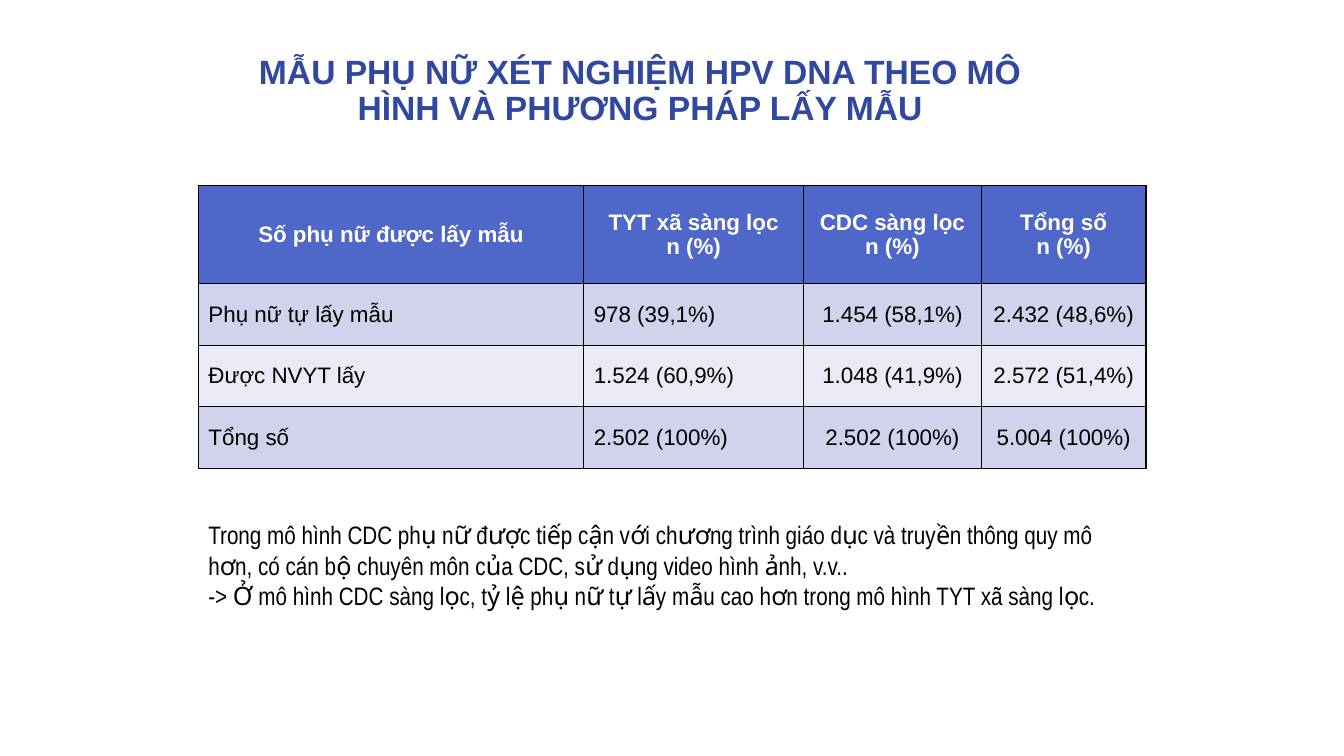
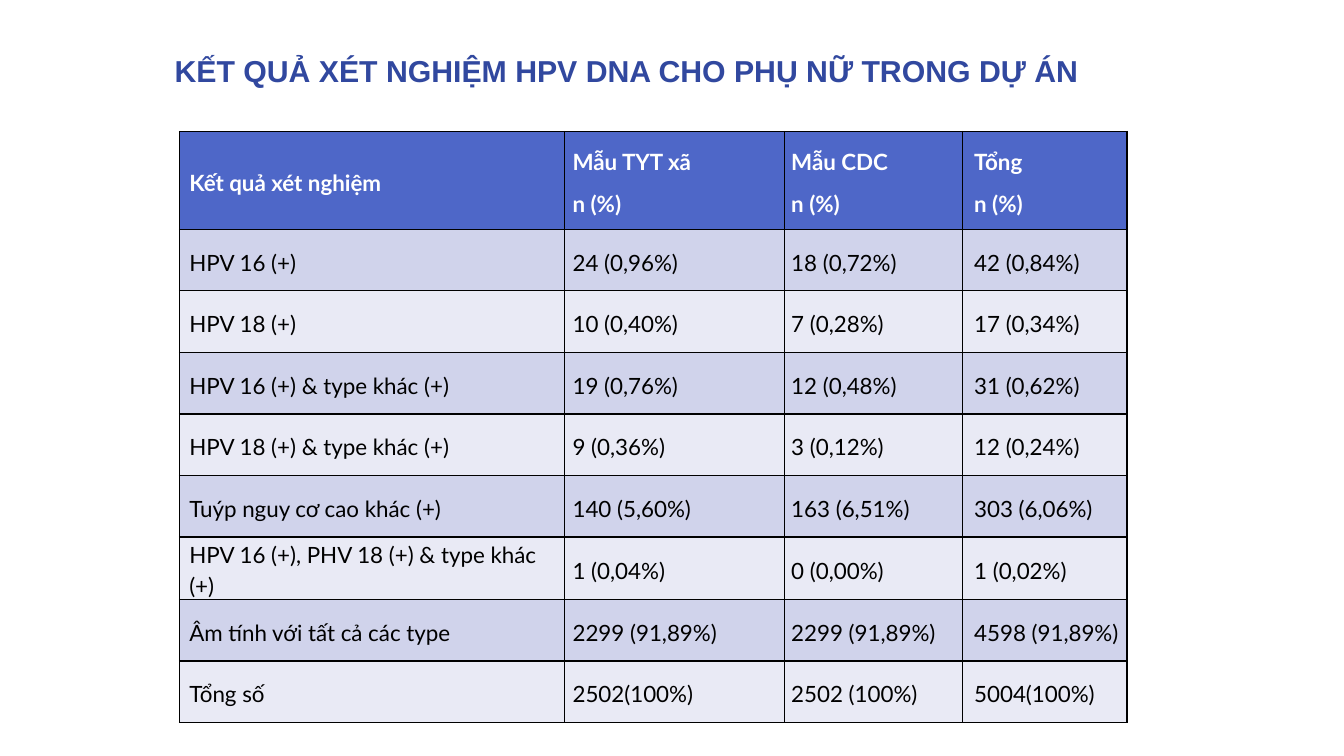
from lxml.etree import SubElement
from pptx import Presentation
from pptx.dml.color import RGBColor
from pptx.enum.lang import MSO_LANGUAGE_ID
from pptx.enum.text import MSO_ANCHOR, PP_ALIGN
from pptx.oxml.ns import qn
from pptx.util import Cm, Pt

# Content: each cell or box holds its paragraphs, split by a line break
SAMPLE = {
    "title": "MẪU PHỤ NỮ XÉT NGHIỆM HPV DNA THEO MÔ HÌNH VÀ PHƯƠNG PHÁP LẤY MẪU",
    "rows": [
        ("Số phụ nữ được lấy mẫu", "TYT xã sàng lọc\nn (%)", "CDC sàng lọc\nn (%)", "Tổng số\nn (%)"),
        ("Phụ nữ tự lấy mẫu", "978 (39,1%)", "1.454 (58,1%)", "2.432 (48,6%)"),
        ("Được NVYT lấy", "1.524 (60,9%)", "1.048 (41,9%)", "2.572 (51,4%)"),
        ("Tổng số", "2.502 (100%)", "2.502 (100%)", "5.004 (100%)"),
    ],
    "note": "Trong mô hình CDC phụ nữ được tiếp cận với chương trình giáo dục và truyền thông "
            "quy mô hơn, có cán bộ chuyên môn của CDC, sử dụng video hình ảnh, v.v..\n"
            "-> Ở mô hình CDC sàng lọc, tỷ lệ phụ nữ tự lấy mẫu cao hơn trong mô hình TYT xã sàng lọc.",
}
RESULT = {
    "title": "KẾT QUẢ XÉT NGHIỆM HPV DNA CHO PHỤ NỮ TRONG DỰ ÁN",
    "rows": [
        ("Kết quả xét nghiệm", "Mẫu TYT xã\nn (%)", "Mẫu CDC\nn (%)", "Tổng\nn (%)"),
        ("HPV 16 (+)", "24 (0,96%)", "18 (0,72%)", "42 (0,84%)"),
        ("HPV 18 (+)", "10 (0,40%)", "7 (0,28%)", "17 (0,34%)"),
        ("HPV 16 (+) & type khác (+)", "19 (0,76%)", "12 (0,48%)", "31 (0,62%)"),
        ("HPV 18 (+) & type khác (+)", "9 (0,36%)", "3 (0,12%)", "12 (0,24%)"),
        ("Tuýp nguy cơ cao khác (+)", "140 (5,60%)", "163 (6,51%)", "303 (6,06%)"),
        ("HPV 16 (+), PHV 18 (+) & type khác (+)", "1 (0,04%)", "0 (0,00%)", "1 (0,02%)"),
        ("Âm tính với tất cả các type", "2299 (91,89%)", "2299 (91,89%)", "4598 (91,89%)"),
        ("Tổng số", "2502(100%)", "2502 (100%)", "5004(100%)"),
    ],
}

# Shared style, lengths in centimetres
NAVY, BLUE, BLACK, WHITE = "31489F", "4E67C8", "000000", "FFFFFF"
BANDS = ("D0D3EB", "E9EAF5")
COLS = (9.71, 5.54, 4.48, 4.15)
HEAD, ROW = 2.47, 1.55
INDENTS = (0.23, 0.18, 0.15, 0.28)
LEFT, MID = PP_ALIGN.LEFT, PP_ALIGN.CENTER


def paint(code):
    return RGBColor.from_string(code)


def write(frame, text, size=16, font="Arial", color=BLACK, bold=False,
          align=LEFT, line=None, after=None, indent=0):
    frame.word_wrap = True
    for i, words in enumerate(text.split("\n")):
        para = frame.add_paragraph() if i else frame.paragraphs[0]
        para.alignment, para.line_spacing = align, line
        if after is not None:
            para.space_after = Pt(after)
        if indent:
            para._p.get_or_add_pPr().set("marL", str(Cm(indent)))
        run = para.add_run()
        run.text = words
        run.font.size, run.font.name, run.font.bold = Pt(size), font, bold
        run.font.language_id = MSO_LANGUAGE_ID.VIETNAMESE
        run.font.color.rgb = paint(color)


def add_box(slide, text, place, anchor=MSO_ANCHOR.TOP, **style):
    frame = slide.shapes.add_textbox(*map(Cm, place)).text_frame
    frame.vertical_anchor = anchor
    write(frame, text, **style)


def add_title(slide, text, place, **style):
    add_box(slide, text, place, MSO_ANCHOR.MIDDLE,
            color=NAVY, bold=True, line=0.9, **style)


def add_edges(cell):
    props = cell._tc.get_or_add_tcPr()
    for side in ("lnL", "lnR", "lnT", "lnB"):
        edge = SubElement(props, qn(f"a:{side}"), w=str(Pt(1)))
        fill = SubElement(edge, qn("a:solidFill"))
        SubElement(fill, qn("a:srgbClr"), val=BLACK)


def add_grid(slide, rows, left, top, style, tight=False):
    """Draw the table; style(row, col) gives the text format of a cell."""
    highs = [HEAD] + [ROW] * (len(rows) - 1)
    place = (left, top, sum(COLS), sum(highs))
    table = slide.shapes.add_table(len(rows), len(COLS), *map(Cm, place)).table
    for col, wide in zip(table.columns, COLS):
        col.width = Cm(wide)
    for r, (texts, high) in enumerate(zip(rows, highs)):
        table.rows[r].height = Cm(high)
        for c, text in enumerate(texts):
            cell = table.cell(r, c)
            cell.vertical_anchor = MSO_ANCHOR.MIDDLE
            if tight:
                cell.margin_left = cell.margin_right = cell.margin_top = Cm(0.02)
                cell.margin_bottom = 0
            add_edges(cell)
            cell.fill.solid()
            cell.fill.fore_color.rgb = paint(BANDS[(r - 1) % 2] if r else BLUE)
            write(cell.text_frame, text, color=BLACK if r else WHITE,
                  bold=r == 0, **style(r, c))


def sample_style(r, c):
    return {"align": MID if r == 0 or c > 1 else LEFT}


def result_style(r, c):
    return {"font": "Lato", "line": 1.15, "after": 8, "indent": INDENTS[c]}


def main():
    deck = Presentation()
    deck.slide_width, deck.slide_height = Cm(33.87), Cm(19.05)
    blank = deck.slide_layouts[6]

    # Samples by model and method
    slide = deck.slides.add_slide(blank)
    add_title(slide, SAMPLE["title"], (5.36, 1.58, 21.54, 1.47), size=24, align=MID)
    add_grid(slide, SAMPLE["rows"], 5, 4.68, sample_style)
    add_box(slide, SAMPLE["note"], (5, 12.97, 22.94, 4.11), size=18, font="Arial Narrow")

    # Test results
    slide = deck.slides.add_slide(blank)
    add_title(slide, RESULT["title"], (4.15, 1.27, 24.64, 1.14), size=21.6)
    add_grid(slide, RESULT["rows"], 4.52, 3.31, result_style, tight=True)

    deck.save("out.pptx")


if __name__ == "__main__":
    main()
